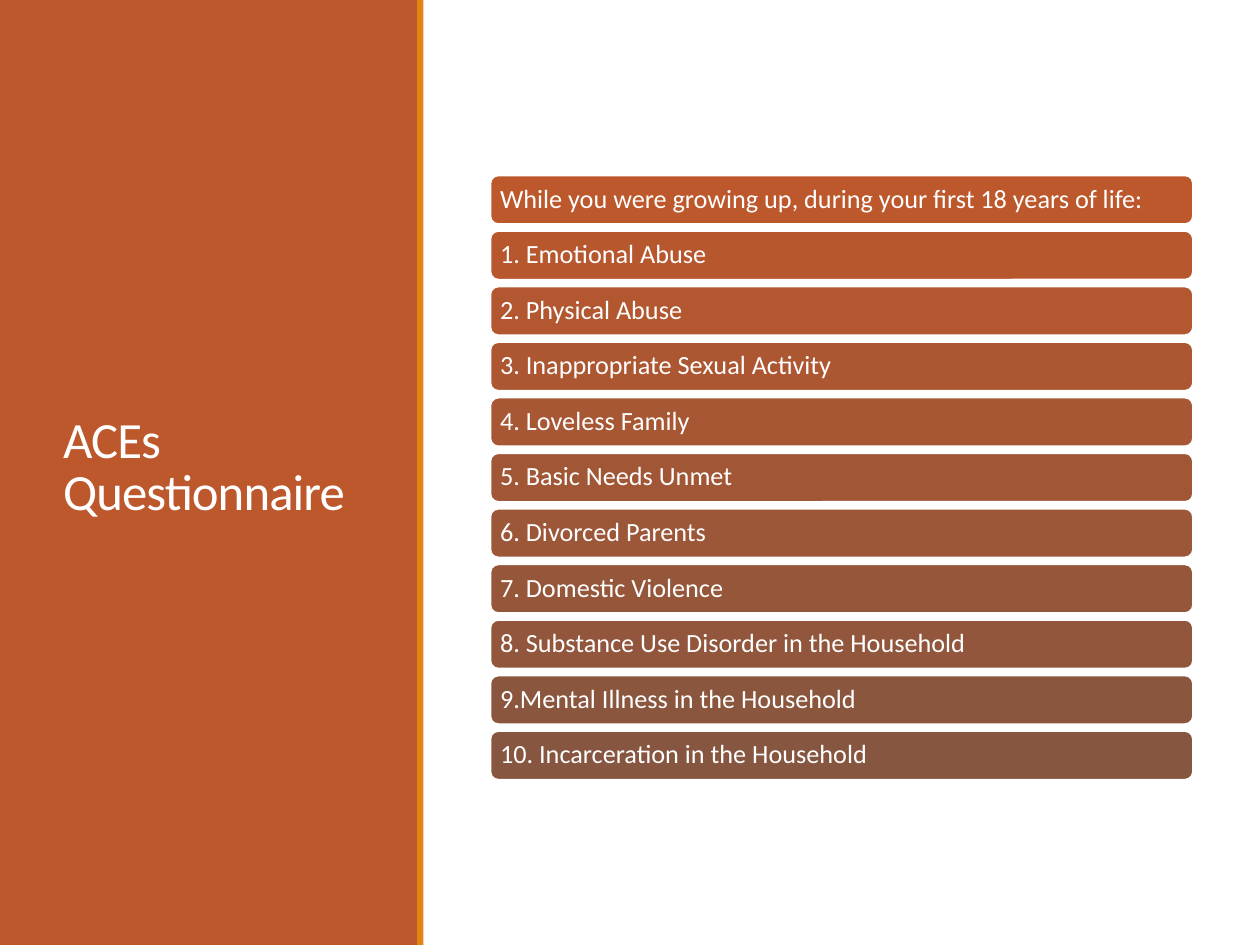
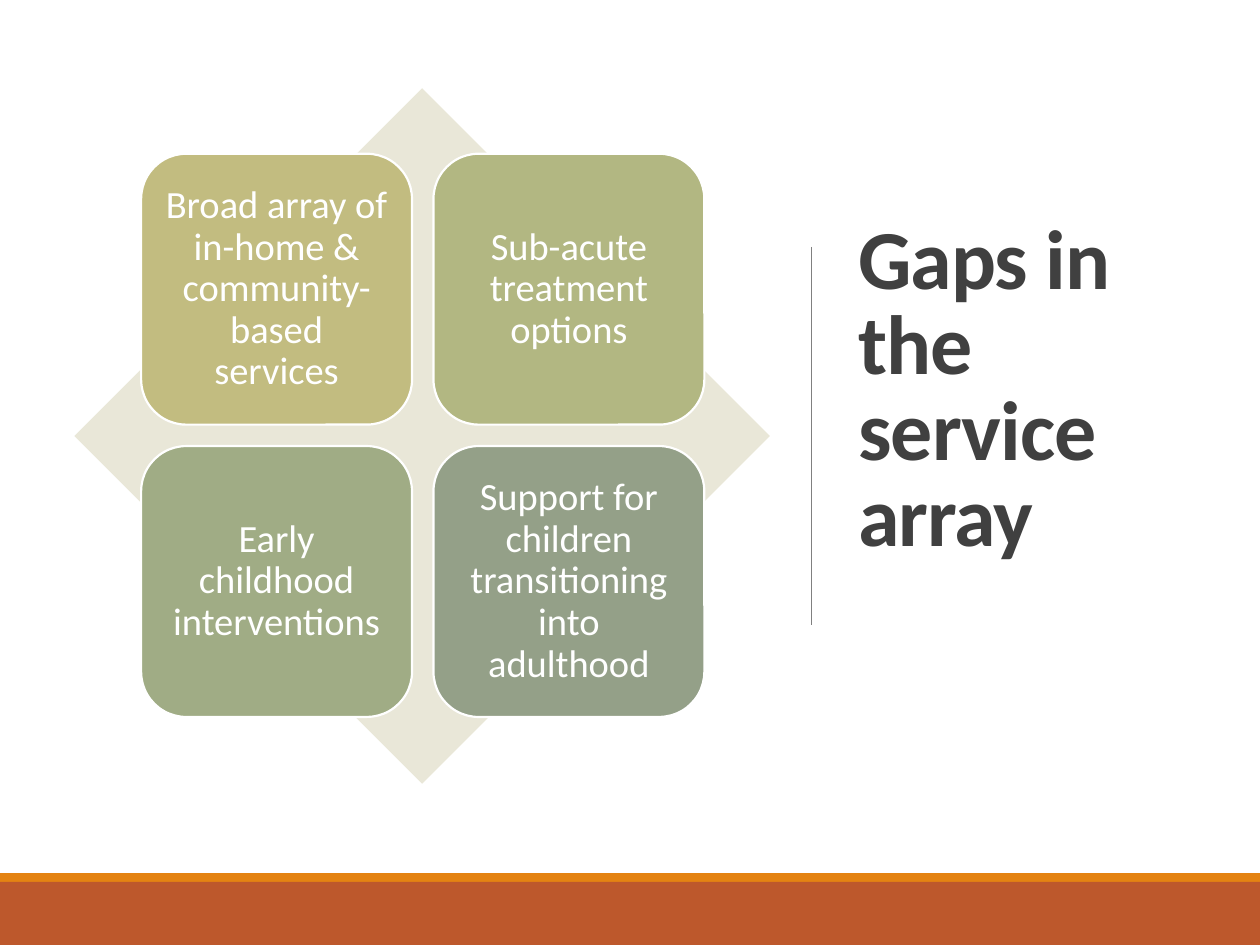
from pptx import Presentation
from pptx import util as u
from pptx.dml.color import RGBColor
from pptx.enum import shapes, text
from pptx.oxml.ns import qn
from lxml import etree

FONT = "Calibri"
COLORS = {
    "white": "FFFFFF",
    "rust": "BD582C",
    "brown": "865640",
    "orange": "E48312",
    "ink": "404040",
    "gray": "808080",
    "sand": "E9E7D8",
    "khaki": "C2BC80",
    "moss": "B2B782",
    "sage": "A0AC85",
    "slate": "94A088",
}
SHAPE = shapes.MSO_SHAPE


def add_block(page, kind, place, fill, label="", size=15, inset=0.06, align=text.PP_ALIGN.LEFT):
    """Add a filled shape; a labelled one also gets a white outline and white text."""
    block = page.shapes.add_shape(kind, *map(u.Inches, place))
    block.shadow.inherit = False
    block.fill.solid()
    block.fill.fore_color.rgb = RGBColor.from_string(fill)
    if not label:
        block.line.fill.background()
        return
    block.line.color.rgb = RGBColor.from_string(COLORS["white"])
    block.line.width = u.Pt(1.25)
    frame = block.text_frame
    frame.word_wrap = True
    frame.vertical_anchor = text.MSO_ANCHOR.MIDDLE
    frame.margin_left = frame.margin_right = u.Inches(inset)
    frame.margin_top = frame.margin_bottom = u.Inches(inset)
    para = frame.paragraphs[0]
    para.text = label
    para.alignment = align
    para.line_spacing = 0.9
    para.font.name = FONT
    para.font.size = u.Pt(size)
    para.font.color.rgb = RGBColor.from_string(COLORS["white"])


def set_title(page, words, place, size, color, bold=False):
    """Format the title placeholder and bring it in front of the blocks."""
    title = page.shapes.title
    title.left, title.top, title.width, title.height = map(u.Inches, place)
    frame = title.text_frame
    frame.word_wrap = True
    frame.auto_size = text.MSO_AUTO_SIZE.NONE
    frame.vertical_anchor = text.MSO_ANCHOR.MIDDLE
    para = frame.paragraphs[0]
    para.text = words
    para.alignment = text.PP_ALIGN.LEFT
    para.line_spacing = 0.85
    para.font.name = FONT
    para.font.size = u.Pt(size)
    para.font.bold = bold
    para.font.color.rgb = RGBColor.from_string(color)
    for props in title.element.iter(qn("a:defRPr")):
        props.set("spc", "-50")
    title.element.getparent().append(title.element)
    return title


deck = Presentation()
deck.slide_width, deck.slide_height = u.Inches(10), u.Inches(7.5)
title_only = deck.slide_layouts[5]

# Slide 1: questionnaire
page = deck.slides.add_slide(title_only)
add_block(page, SHAPE.RECTANGLE, (0, 0, 3.32, 7.5), COLORS["rust"])
add_block(page, SHAPE.RECTANGLE, (3.31, 0, 0.05, 7.5), COLORS["orange"])
set_title(page, "ACEs Questionnaire", (0.4, 0.57, 2.53, 6.31), 29, COLORS["white"])

questions = [
    "While you were growing up, during your first 18 years of life:",
    "1. Emotional Abuse",
    "2. Physical Abuse",
    "3. Inappropriate Sexual Activity",
    "4. Loveless Family",
    "5. Basic Needs Unmet",
    "6. Divorced Parents",
    "7. Domestic Violence",
    "8. Substance Use Disorder in the Household",
    "9.Mental Illness in the Household",
    "10. Incarceration in the Household",
]
first_top, last_top = 1.39, 5.8
first_rgb = RGBColor.from_string(COLORS["rust"])
last_rgb = RGBColor.from_string(COLORS["brown"])
for index, question in enumerate(questions):
    share = index / (len(questions) - 1)
    top = first_top + share * (last_top - first_top)
    blend = [int(a + share * (b - a)) for a, b in zip(first_rgb, last_rgb)]
    add_block(page, SHAPE.ROUNDED_RECTANGLE, (3.89, top, 5.58, 0.39),
              str(RGBColor(*blend)), question)

# Slide 2: service gaps
page = deck.slides.add_slide(title_only)
add_block(page, SHAPE.RECTANGLE, (0, 6.93, 10, 0.07), COLORS["orange"])
add_block(page, SHAPE.RECTANGLE, (0, 7, 10, 0.5), COLORS["rust"])
title = set_title(page, "Gaps in the service array", (6.71, 0.69, 2.77, 5.53), 48,
                  COLORS["ink"], bold=True)
title.text_frame.margin_bottom = u.Inches(0.74)

divider = page.shapes.add_connector(shapes.MSO_CONNECTOR.STRAIGHT, u.Inches(6.44),
                                    u.Inches(1.96), u.Inches(6.44), u.Inches(4.96))
divider.line.color.rgb = RGBColor.from_string(COLORS["gray"])
divider.line.width = u.Pt(0.5)
etree.SubElement(divider.element.spPr, qn("a:effectLst"))

add_block(page, SHAPE.DIAMOND, (0.59, 0.7, 5.52, 5.52), COLORS["sand"])
gaps = [
    ("Broad array of in-home & community-based services", "khaki"),
    ("Sub-acute treatment options", "moss"),
    ("Early childhood interventions", "sage"),
    ("Support for children transitioning into adulthood", "slate"),
]
for index, (gap, color) in enumerate(gaps):
    row, column = divmod(index, 2)
    place = (1.12 + 2.32 * column, 1.22 + 2.32 * row, 2.15, 2.15)
    add_block(page, SHAPE.ROUNDED_RECTANGLE, place, COLORS[color], gap,
              size=22, inset=0.09, align=text.PP_ALIGN.CENTER)

deck.save("out.pptx")
